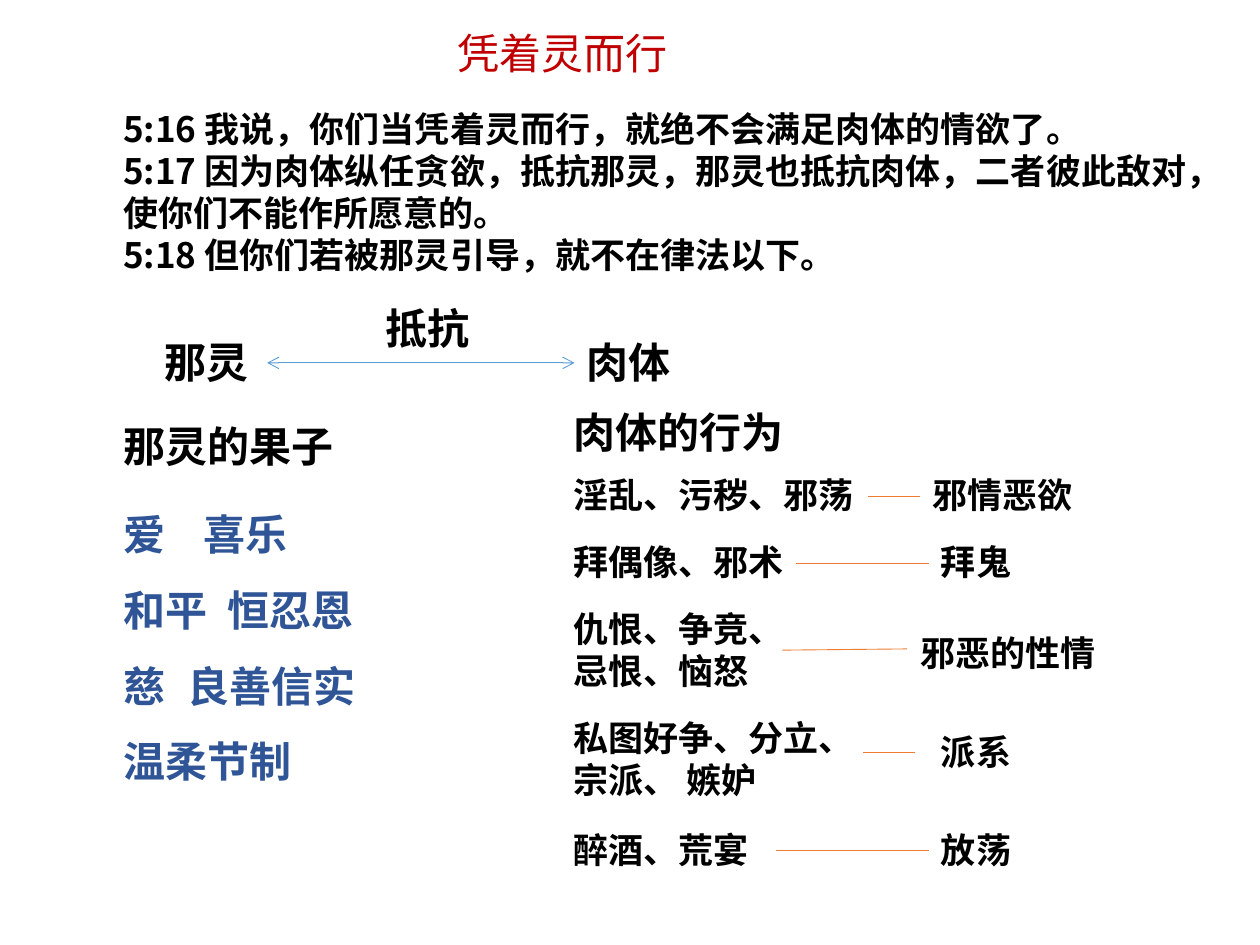
from lxml import etree
from pptx import Presentation
from pptx.dml.color import RGBColor
from pptx.enum.shapes import MSO_CONNECTOR
from pptx.enum.text import MSO_AUTO_SIZE
from pptx.oxml.ns import qn
from pptx.util import Inches, Pt

STRAIGHT = MSO_CONNECTOR.STRAIGHT
GROW = MSO_AUTO_SIZE.SHAPE_TO_FIT_TEXT
BLACK = RGBColor(0x00, 0x00, 0x00)
RED = RGBColor(0xC0, 0x00, 0x00)
NAVY = RGBColor(0x2F, 0x55, 0x97)
BLUE = RGBColor(0x5B, 0x9B, 0xD5)
ORANGE = RGBColor(0xED, 0x7D, 0x31)
NOTO, CALIBRI = "Noto Sans CJK SC", "Calibri"
LEFT, RIGHT = 0.88, 4.45

VERSES = [
    "5:16 我说，你们当凭着灵而行，就绝不会满足肉体的情欲了。",
    "5:17 因为肉体纵任贪欲，抵抗那灵，那灵也抵抗肉体，二者彼此敌对，使你们不能作所愿意的。",
    "5:18 但你们若被那灵引导，就不在律法以下。",
]
HEADINGS = [
    ("那灵", 1.21, 2.62, 0.92, True),
    ("肉体", 4.56, 2.62, 0.87, False),
    ("抵抗", 2.96, 2.35, 0.87, False),
    ("肉体的行为", RIGHT, 3.18, 2.08, True),
    ("那灵的果子", LEFT, 3.29, 2.4, True),
]
DEEDS = [
    (["淫乱、污秽、邪荡"], 3.71, 2.43, 0.44, False),
    (["拜偶像、邪术"], 4.24, 1.88, 0.44, False),
    (["仇恨、争竞、", "忌恨、恼怒"], 4.77, 2.25, 0.77, True),
    (["私图好争、分立、宗派、 嫉妒"], 5.64, 2.44, 0.77, True),
    (["醉酒、荒宴"], 6.53, 1.84, 0.44, True),
]
KINDS = [
    ("邪情恶欲", 7.3, 3.71, 1.32),
    ("拜鬼", 7.37, 4.24, 0.76),
    ("邪恶的性情", 7.21, 4.96, 1.6),
    ("派系", 7.37, 5.75, 0.76),
    ("放荡", 7.37, 6.53, 0.76),
]
LINKS = [
    (6.89, 3.94, 7.3, 3.94),
    (6.32, 4.47, 7.37, 4.47),
    (6.21, 5.16, 7.2, 5.15),
    (6.85, 5.97, 7.26, 5.97),
    (6.16, 6.75, 7.37, 6.75),
]


class Deck:
    """Holds the text style and the current slide."""

    def __init__(self, prs):
        self.s = prs.slides.add_slide(prs.slide_layouts[6])

    def text(self, lines, x, y, w, h, size=20, font=NOTO, color=BLACK,
             bold=True, wrap=False, leading=1.2, tabs=()):
        sp = self.s.shapes.add_textbox(Inches(x), Inches(y), Inches(w), Inches(h))
        tf = sp.text_frame
        tf.word_wrap = wrap
        tf.auto_size = GROW
        tf.text = "\n".join(lines)
        for p in tf.paragraphs:
            p.line_spacing = Pt(size * leading)
            for r in p.runs:
                r.font.size = Pt(size)
                r.font.bold = bold
                r.font.color.rgb = color
                r.font.name = font
                etree.SubElement(r.font._element, qn("a:ea"), typeface=NOTO)
        for p, stop in zip(tf.paragraphs, tabs):
            tab_list = etree.SubElement(p._p.get_or_add_pPr(), qn("a:tabLst"))
            for pos in stop:
                etree.SubElement(tab_list, qn("a:tab"), pos=str(Inches(pos)), algn="l")

    def line(self, x1, y1, x2, y2, color=ORANGE, arrows=False):
        c = self.s.shapes.add_connector(
            STRAIGHT, Inches(x1), Inches(y1), Inches(x2), Inches(y2))
        c.line.color.rgb = color
        c.line.width = Pt(0.5)
        if arrows:
            for end in ("a:headEnd", "a:tailEnd"):
                etree.SubElement(c.line._get_or_add_ln(), qn(end), type="arrow")
        etree.SubElement(c._element.spPr, qn("a:effectLst"))


def main():
    prs = Presentation()
    prs.slide_width, prs.slide_height = Inches(10), Inches(7.5)
    deck = Deck(prs)
    deck.text(["凭着灵而行"], 3.53, 0.17, 2.22, 0.5, 24, color=RED, bold=False, wrap=True)
    deck.text(VERSES, LEFT, 0.8, 8.66, 1.45, wrap=True)
    for label, x, y, w, wrap in HEADINGS:
        deck.text([label], x, y, w, 0.5, 24, CALIBRI, wrap=wrap)
    deck.line(2.12, 2.88, 4.56, 2.88, BLUE, arrows=True)
    deck.text(["爱\t喜乐", "和平\t恒忍恩慈\t良善信实 温柔节制"], LEFT, 3.79, 2.08, 3.13,
              24, color=NAVY, wrap=True, leading=1.8, tabs=[(0.64,), (0.51, 0.83)])
    for lines, y, w, h, wrap in DEEDS:
        deck.text(lines, RIGHT, y, w, h, wrap=wrap)
    for label, x, y, w in KINDS:
        deck.text([label], x, y, w, 0.44)
    for ends in LINKS:
        deck.line(*ends)
    prs.save("out.pptx")


if __name__ == "__main__":
    main()
